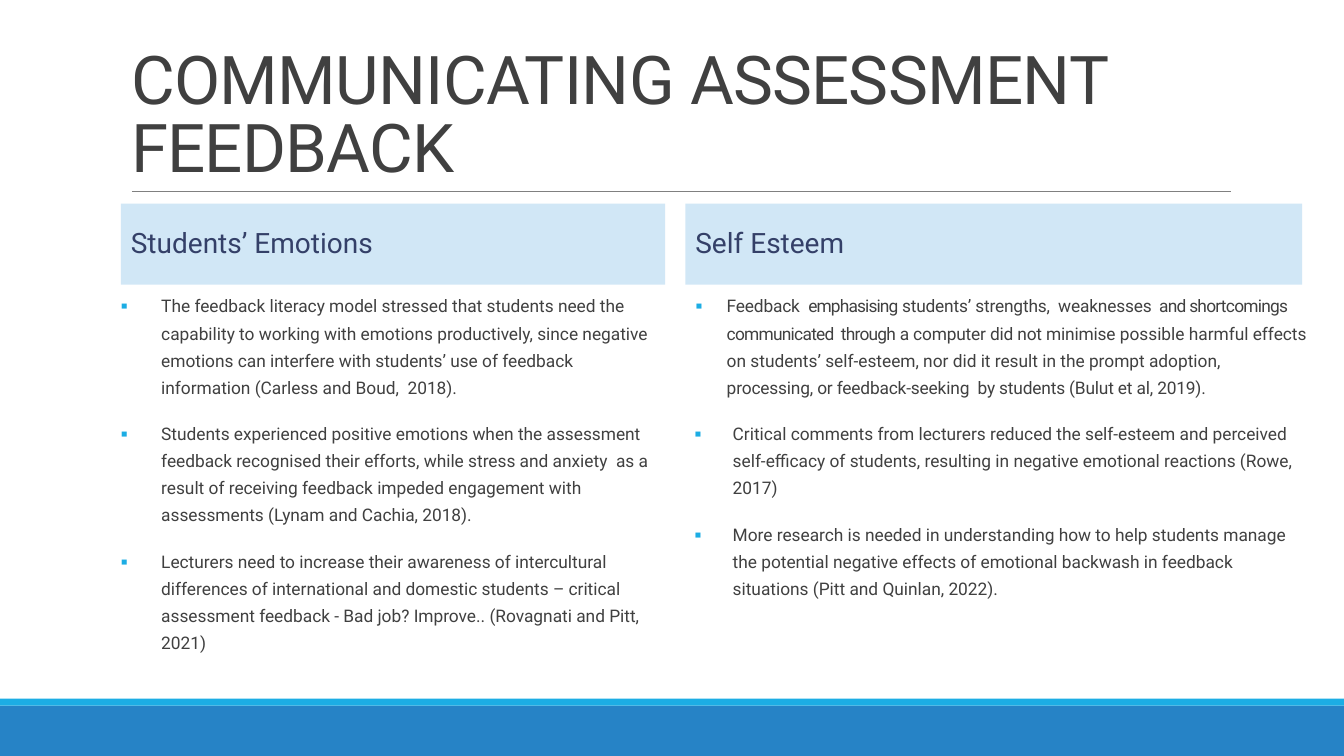
"""Build a two-column slide on communicating assessment feedback."""
from lxml.etree import SubElement
from pptx import Presentation
from pptx.dml.color import RGBColor
from pptx.enum.shapes import MSO_CONNECTOR as Connector, MSO_SHAPE as Shape
from pptx.enum.text import MSO_ANCHOR as Anchor, MSO_AUTO_SIZE as AutoSize, PP_ALIGN as Align
from pptx.oxml.ns import qn
from pptx.util import Pt


def color(value):
    return RGBColor.from_string(value)


def add_span(para, text, size, tint, spacing=0):
    span = para.add_run()
    span.text = text
    for name, value in {"name": "Roboto", "size": Pt(size), "bold": False}.items():
        setattr(span.font, name, value)
    span.font.color.rgb = color(tint)
    span._r.get_or_add_rPr().set("spc", str(round(spacing * 100)))


deck = Presentation()
deck.slide_width, deck.slide_height = Pt(960), Pt(540)
page = deck.slides.add_slide(deck.slide_layouts[5])

columns = [
    {
        "heading": "Students’ Emotions", "left": 86.4, "head_width": 388.8, "body_width": 388.8,
        "points": [
            (28.8, 28.8, [("The feedback literacy model stressed that students need the capability to working with emotions productively, since negative emotions can interfere with students’ use of feedback information (Carless and Boud,  2018).", 0)]),
            (28.8, 28.8, [("Students experienced positive emotions when the assessment feedback recognised their efforts, while stress and anxiety  as a result of receiving feedback impeded engagement with assessments (Lynam and Cachia, 2018).", 0)]),
            (28.8, 28.8, [("Lecturers need to increase their awareness of intercultural differences of international and domestic students – critical assessment feedback - Bad job? Improve.. (Rovagnati and Pitt, 2021)", 0)]),
        ],
    },
    {
        "heading": "Self Esteem", "left": 489.6, "head_width": 440.6, "body_width": 447.1,
        "points": [
            (29.5, 22.3, [
                ("Feedback  ", -0.1),
                ("emphasising ", -0.6),
                ("students’ strengths,  weaknesses", -0.1),
                ("  and shortcomings communicated  through ", -0.5),
                ("a computer did not minimise ", -0.1),
                ("possible harmful effects on students’ self-esteem, nor did it result in the prompt adoption, ", 0),
                ("processing, or feedback-seeking  by students (Bulut et al, 2019).", -0.1),
            ]),
            (33.8, 27.3, [("Critical comments from lecturers reduced the self-esteem and perceived self-efficacy of students, resulting in negative emotional reactions (Rowe, 2017)", 0)]),
            (33.8, 27.3, [("More research is needed in understanding how to help students manage the potential negative effects of emotional backwash in feedback situations (Pitt and Quinlan, 2022).", 0)]),
        ],
    },
]

for top, height, fill in [(504, 36, "2683C6"), (499, 5, "1CADE4")]:
    bar = page.shapes.add_shape(Shape.RECTANGLE, 0, Pt(top), deck.slide_width, Pt(height))
    bar.shadow.inherit = False
    bar.fill.solid()
    bar.fill.fore_color.rgb = color(fill)
    bar.line.fill.background()

rule = page.shapes.add_connector(Connector.STRAIGHT, Pt(94.3), Pt(136.8), Pt(879), Pt(136.8))
rule.line.color.rgb = color("808080")
rule.line.width = Pt(0.5)
SubElement(rule._element.spPr, qn("a:effectLst"))

title = page.shapes.title
for name, value in {"left": 86.4, "top": 22.3, "width": 792, "height": 114.5}.items():
    setattr(title, name, Pt(value))
for name, value in {"word_wrap": True, "auto_size": AutoSize.NONE, "vertical_anchor": Anchor.BOTTOM}.items():
    setattr(title.text_frame, name, value)
para = title.text_frame.paragraphs[0]
para.alignment, para.line_spacing = Align.LEFT, 0.85
add_span(para, "COMMUNICATING ASSESSMENT FEEDBACK", 48, "404040", -0.5)

for column in columns:
    left = Pt(column["left"])
    header = page.shapes.add_shape(Shape.RECTANGLE, left, Pt(145.4), Pt(column["head_width"]), Pt(58))
    header.shadow.inherit = False
    header.fill.solid()
    header.fill.fore_color.rgb = color("D1E7F6")
    header.line.fill.background()
    header.text_frame.word_wrap = True
    header.text_frame.vertical_anchor = Anchor.MIDDLE
    para = header.text_frame.paragraphs[0]
    para.alignment, para.line_spacing = Align.LEFT, 0.9
    add_span(para, column["heading"], 20, "344068")

    box = page.shapes.add_textbox(left, Pt(203.2), Pt(column["body_width"]), Pt(258.5))
    frame = box.text_frame
    for name, value in {"word_wrap": True, "margin_left": 0, "margin_right": 0}.items():
        setattr(frame, name, value)
    for index, (margin, hanging, spans) in enumerate(column["points"]):
        para = frame.add_paragraph() if index else frame.paragraphs[0]
        props = para._p.get_or_add_pPr()
        props.set("marL", str(Pt(margin)))
        props.set("indent", str(-Pt(hanging)))
        SubElement(SubElement(props, qn("a:buClr")), qn("a:srgbClr")).set("val", "1CADE4")
        SubElement(props, qn("a:buFont")).set("typeface", "Roboto")
        SubElement(props, qn("a:buChar")).set("char", "▪")
        spacing = {"line_spacing": 1.3, "space_before": Pt(12 if index else 0), "space_after": Pt(2)}
        for name, value in spacing.items():
            setattr(para, name, value)
        for text, tracking in spans:
            add_span(para, text, 12.4, "404040", tracking)

deck.save("out.pptx")
